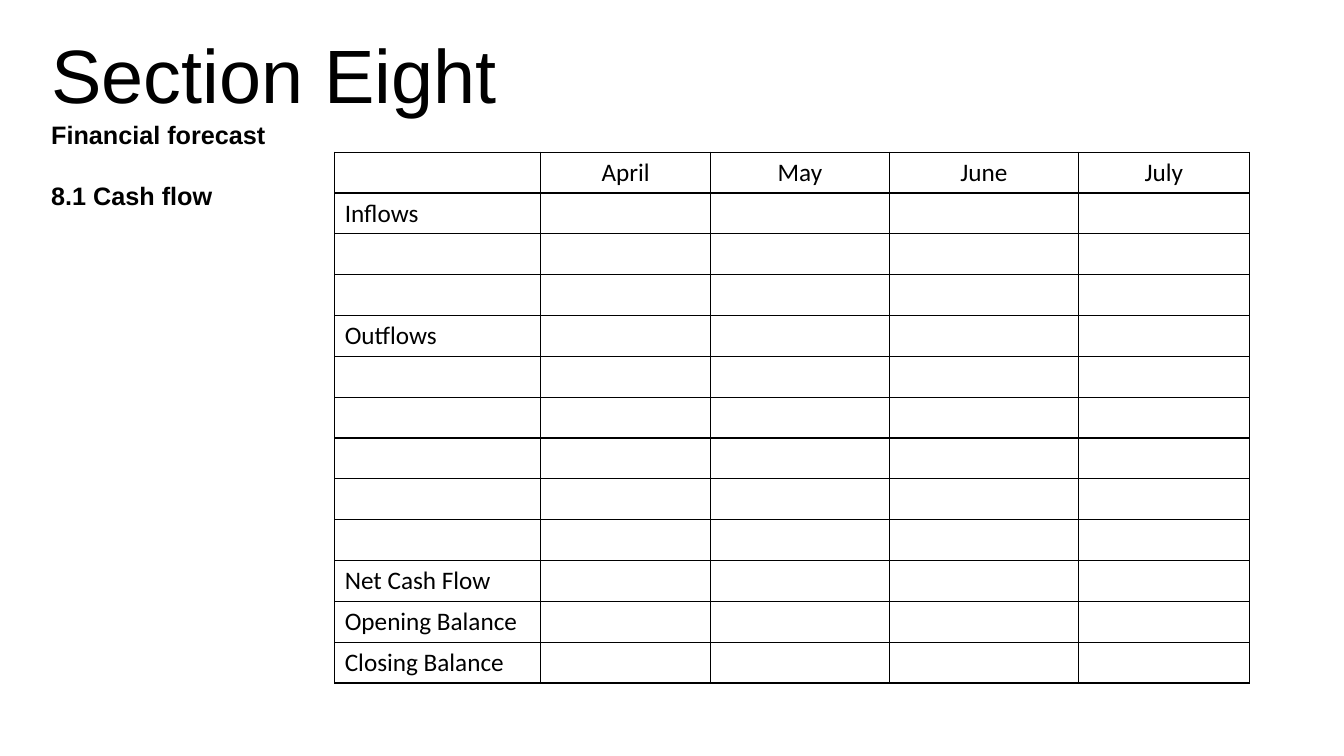
import pptx
import pptx.util
import pptx.dml.color
import pptx.enum.text
import pptx.oxml
import pptx.oxml.ns

BLACK = "000000"
MONTHS = ["April", "May", "June", "July"]
ROW_LABELS = {1: "Inflows", 4: "Outflows", 10: "Net Cash Flow",
              11: "Opening Balance", 12: "Closing Balance"}
ROW_COUNT = 13
COLUMN_WIDTHS = [2.04, 1.69, 1.77, 1.88, 1.69]
TABLE_HEIGHT = 5.27
inch = pptx.util.Inches


def color(code):
    return pptx.dml.color.RGBColor.from_string(code)


def add_text(para, text, formats):
    span = para.add_run()
    span.text = text
    for name, value in formats.items():
        setattr(span.font, name, value)
    span.font.color.rgb = color(BLACK)


deck = pptx.Presentation()
deck.slide_width, deck.slide_height = inch(13.33), inch(7.5)
page = deck.slides.add_slide(deck.slide_layouts[6])

box = page.shapes.add_textbox(inch(0.41), inch(0.23), inch(6.67), inch(1.92))
box.text_frame.word_wrap = True
heading = {"name": "Arial", "size": pptx.util.Pt(54)}
subheading = {"name": "Arial", "size": pptx.util.Pt(18), "bold": True}
lines = [("Section Eight", heading, 0),
         ("Financial forecast", subheading, 0),
         ("8.1 Cash flow", subheading, 22)]
for index, (text, formats, gap) in enumerate(lines):
    para = box.text_frame.add_paragraph() if index else box.text_frame.paragraphs[0]
    para.space_before = pptx.util.Pt(gap)
    add_text(para, text, formats)

frame = page.shapes.add_table(ROW_COUNT, len(COLUMN_WIDTHS), inch(3.32), inch(1.51),
                              inch(sum(COLUMN_WIDTHS)), inch(TABLE_HEIGHT))
cash_flow = frame.table
cash_flow.first_row = False
cash_flow.horz_banding = False
for column, width in zip(cash_flow.columns, COLUMN_WIDTHS):
    column.width = inch(width)

body = {"name": "Calibri", "size": pptx.util.Pt(18)}
for row_index, row in enumerate(cash_flow.rows):
    row.height = inch(TABLE_HEIGHT / ROW_COUNT)
    for column_index, cell in enumerate(row.cells):
        properties = cell._tc.get_or_add_tcPr()
        for side in ("lnL", "lnR", "lnT", "lnB"):
            properties.append(pptx.oxml.parse_xml(
                f'<a:{side} {pptx.oxml.ns.nsdecls("a")} w="{pptx.util.Pt(1)}">'
                f'<a:solidFill><a:srgbClr val="{BLACK}"/></a:solidFill></a:{side}>'))
        cell.fill.background()
        para = cell.text_frame.paragraphs[0]
        for name, value in body.items():
            setattr(para.font, name, value)
        if column_index == 0:
            text = ROW_LABELS.get(row_index)
        else:
            text = MONTHS[column_index - 1] if row_index == 0 else None
            para.alignment = pptx.enum.text.PP_ALIGN.CENTER
        if text:
            add_text(para, text, body)

deck.save("out.pptx")
